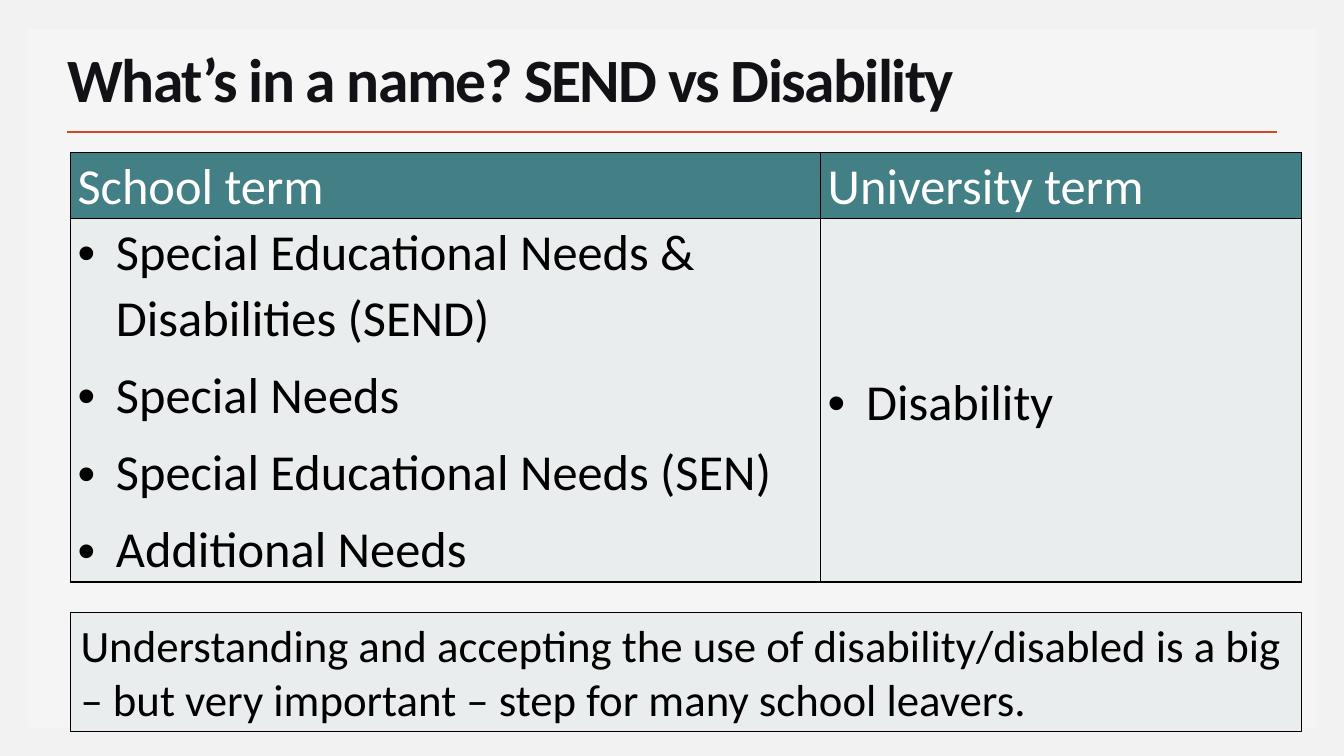
from dataclasses import dataclass

from lxml import etree
from pptx import Presentation
from pptx.dml.color import RGBColor
from pptx.enum import shapes, text
from pptx.oxml import ns
from pptx.util import Inches, Pt

INK, WHITE, PANEL, TEAL = "000000", "FFFFFF", "E9EDED", "438086"
LEFT, WIDTH = 0.7, 12.21
COLUMN_WIDTHS = (7.44, 4.77)
ROW_HEIGHTS = (0.65, 3.61)


@dataclass
class TermCell:
    row: int
    column: int
    lines: list[str]
    fill: str = PANEL
    color: str = INK
    bulleted: bool = True
    top: float = 0


CELLS = [
    TermCell(0, 0, ["School term"], TEAL, WHITE, bulleted=False),
    TermCell(0, 1, ["University term"], TEAL, WHITE, bulleted=False),
    TermCell(1, 0, ["Special Educational Needs & Disabilities (SEND)", "Special Needs",
                    "Special Educational Needs (SEN)", "Additional Needs"]),
    TermCell(1, 1, ["Disability"], top=1.49),
]


def rgb(value: str) -> RGBColor:
    return RGBColor.from_string(value)


def paint(target, color: str) -> None:
    target.fill.solid()
    target.fill.fore_color.rgb = rgb(color)


def write(para, content: str, *, size: float, color: str = INK, bold: bool = False,
          tracking: int = 0, line_spacing: float = 1, after: float = 0) -> None:
    """Add one formatted span; tracking is in hundredths of a point."""
    para.alignment = text.PP_ALIGN.LEFT
    para.line_spacing = line_spacing
    para.space_after = Pt(after)
    span = para.add_run()
    span.text = content
    span.font.name = "Calibri"
    span.font.size = Pt(size)
    span.font.bold = bold
    span.font.color.rgb = rgb(color)
    if tracking:
        span.font._element.set("spc", str(tracking))


def add_bullet(para) -> None:
    properties = para._p.get_or_add_pPr()
    properties.set("marL", str(Inches(0.38)))
    properties.set("indent", str(-Inches(0.38)))
    etree.SubElement(properties, ns.qn("a:buFont"), typeface="Arial")
    etree.SubElement(properties, ns.qn("a:buChar"), char="•")


def add_borders(cell) -> None:
    properties = cell._tc.get_or_add_tcPr()
    for index, side in enumerate(("lnL", "lnR", "lnT", "lnB")):
        border = etree.Element(ns.qn(f"a:{side}"), w=str(Pt(1)))
        fill = etree.SubElement(border, ns.qn("a:solidFill"))
        etree.SubElement(fill, ns.qn("a:srgbClr"), val=INK)
        properties.insert(index, border)


def add_box(page, left: float, top: float, width: float, height: float, fill: str):
    box = page.shapes.add_shape(shapes.MSO_SHAPE.RECTANGLE, Inches(left), Inches(top),
                                Inches(width), Inches(height))
    box.shadow.inherit = False
    paint(box, fill)
    box.line.fill.background()
    return box


def add_rule(page) -> None:
    rule = page.shapes.add_connector(shapes.MSO_CONNECTOR.STRAIGHT, Inches(0.66),
                                     Inches(1.31), Inches(12.67), Inches(1.31))
    rule.line.color.rgb = rgb("D24726")
    rule.line.width = Pt(2)
    etree.SubElement(rule._element.spPr, ns.qn("a:effectLst"))


def format_title(page) -> None:
    title = page.shapes.title
    title.left, title.top = Inches(0.57), Inches(0.49)
    title.width, title.height = Inches(12.06), Inches(0.7)
    frame = title.text_frame
    frame.auto_size = text.MSO_AUTO_SIZE.NONE
    frame.vertical_anchor = text.MSO_ANCHOR.BOTTOM
    write(frame.paragraphs[0], "What’s in a name? SEND vs Disability", size=44,
          color="111116", bold=True, tracking=-120, line_spacing=0.85)


def fill_cell(cell, term: TermCell) -> None:
    cell.margin_left = cell.margin_right = Inches(0.07)
    cell.margin_top, cell.margin_bottom = Inches(term.top), 0
    paint(cell, term.fill)
    add_borders(cell)
    frame = cell.text_frame
    for index, line in enumerate(term.lines):
        para = frame.add_paragraph() if index else frame.paragraphs[0]
        write(para, line, size=36, color=term.color, line_spacing=1.07, after=8)
        if term.bulleted:
            add_bullet(para)


def add_terms(page) -> None:
    table = page.shapes.add_table(len(ROW_HEIGHTS), len(COLUMN_WIDTHS), Inches(LEFT),
                                  Inches(1.51), Inches(WIDTH),
                                  Inches(sum(ROW_HEIGHTS))).table
    table.horz_banding = False
    for column, width in zip(table.columns, COLUMN_WIDTHS):
        column.width = Inches(width)
    for row, height in zip(table.rows, ROW_HEIGHTS):
        row.height = Inches(height)
    for term in CELLS:
        fill_cell(table.cell(term.row, term.column), term)


def add_takeaway(page) -> None:
    box = add_box(page, LEFT, 6.08, WIDTH, 1.18, PANEL)
    box.line.color.rgb = rgb(INK)
    box.line.width = Pt(0.75)
    frame = box.text_frame
    frame.word_wrap = True
    frame.auto_size = text.MSO_AUTO_SIZE.SHAPE_TO_FIT_TEXT
    frame.vertical_anchor = text.MSO_ANCHOR.TOP
    write(frame.paragraphs[0], "Understanding and accepting the use of disability/disabled "
          "is a big – but very important – step for many school leavers.", size=32)


def main() -> None:
    deck = Presentation()
    deck.slide_width, deck.slide_height = Inches(13.33), Inches(7.5)
    page = deck.slides.add_slide(deck.slide_layouts[5])
    paint(page.background, "F2F2F2")
    backdrop = add_box(page, 0.28, 0.29, 12.78, 6.93, "F5F5F5")
    page.shapes.title._element.addprevious(backdrop._element)
    add_rule(page)
    format_title(page)
    add_terms(page)
    add_takeaway(page)
    deck.save("out.pptx")


if __name__ == "__main__":
    main()
